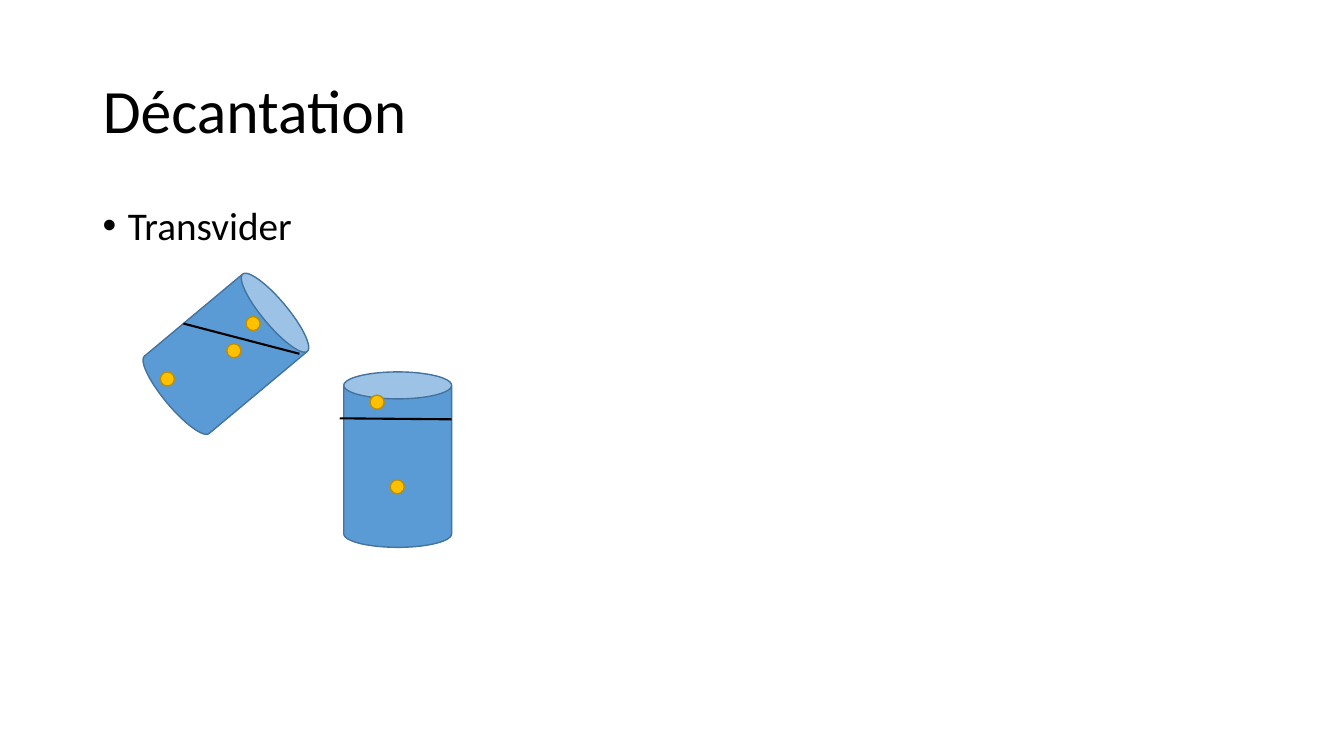
import pptx
import pptx.util
import pptx.dml.color
import pptx.enum.shapes
import pptx.enum.text
import pptx.oxml
import pptx.oxml.ns

Inches = pptx.util.Inches
Pt = pptx.util.Pt
RGBColor = pptx.dml.color.RGBColor
MSO_SHAPE = pptx.enum.shapes.MSO_SHAPE

BLACK = RGBColor(0x00, 0x00, 0x00)
WATER = RGBColor(0x5B, 0x9B, 0xD5)
WATER_EDGE = RGBColor(0x43, 0x73, 0x9E)
GRAIN = RGBColor(0xFF, 0xC0, 0x00)
GRAIN_EDGE = RGBColor(0xBD, 0x8E, 0x00)
GRAIN_SIZE = 0.14


def write(tf, text, size, anchor):
    tf.text = text
    tf.word_wrap = True
    tf.auto_size = pptx.enum.text.MSO_AUTO_SIZE.NONE
    tf.vertical_anchor = anchor
    p = tf.paragraphs[0]
    p.alignment = pptx.enum.text.PP_ALIGN.LEFT
    p.line_spacing = 0.9
    r = p.runs[0]
    r.font.name = "Calibri"
    r.font.size = Pt(size)
    r.font.color.rgb = BLACK
    return p


def add_filled(kind, left, top, width, height, fill, edge):
    sp = s.shapes.add_shape(kind, Inches(left), Inches(top), Inches(width), Inches(height))
    sp.shadow.inherit = False
    sp.fill.solid()
    sp.fill.fore_color.rgb = fill
    sp.line.color.rgb = edge
    sp.line.width = Pt(1)
    return sp


prs = pptx.Presentation()
prs.slide_width = Inches(13.33)
prs.slide_height = Inches(7.5)
s = prs.slides.add_slide(prs.slide_layouts[5])

title = s.shapes.title
title.left, title.top = Inches(0.92), Inches(0.4)
title.width, title.height = Inches(11.5), Inches(1.45)
write(title.text_frame, "Décantation", 44, pptx.enum.text.MSO_ANCHOR.MIDDLE)

body = s.shapes.add_textbox(Inches(0.92), Inches(2), Inches(11.5), Inches(4.76))
p = write(body.text_frame, "Transvider", 28, pptx.enum.text.MSO_ANCHOR.TOP)
pPr = p._p.get_or_add_pPr()
pPr.set("marL", str(Inches(0.25)))
pPr.set("indent", str(-Inches(0.25)))
ns = pptx.oxml.ns.nsdecls("a")
pPr.append(pptx.oxml.parse_xml(f'<a:buFont {ns} typeface="Arial"/>'))
pPr.append(pptx.oxml.parse_xml(f'<a:buChar {ns} char="•"/>'))

for left, top, width, height, angle in [
    (1.74, 2.75, 1, 1.52, 50.1),
    (3.41, 3.69, 1.07, 1.74, 0),
]:
    beaker = add_filled(MSO_SHAPE.CAN, left, top, width, height, WATER, WATER_EDGE)
    beaker.rotation = angle

for x1, y1, x2, y2 in [(1.82, 3.21, 2.97, 3.51), (3.37, 4.15, 4.48, 4.16)]:
    level = s.shapes.add_connector(
        pptx.enum.shapes.MSO_CONNECTOR.STRAIGHT,
        Inches(x1), Inches(y1), Inches(x2), Inches(y2))
    level.line.color.rgb = BLACK
    level.line.width = Pt(1.5)
    level._element.spPr.append(pptx.oxml.parse_xml(f"<a:effectLst {ns}/>"))

for left, top in [(2.25, 3.41), (1.59, 3.69), (2.44, 3.14), (3.67, 3.92), (3.87, 4.76)]:
    add_filled(MSO_SHAPE.FLOWCHART_CONNECTOR, left, top, GRAIN_SIZE, GRAIN_SIZE,
               GRAIN, GRAIN_EDGE)

prs.save("out.pptx")
